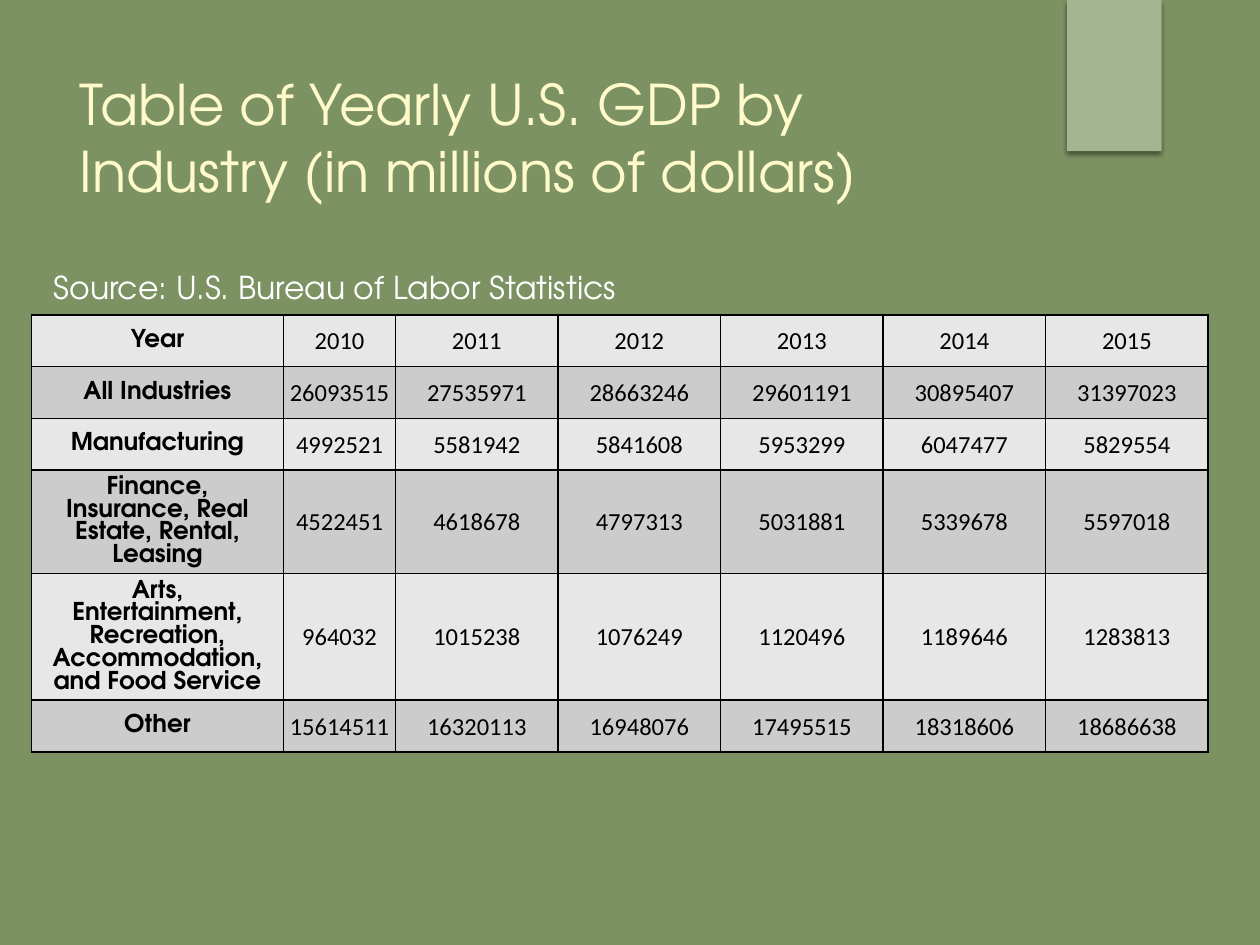
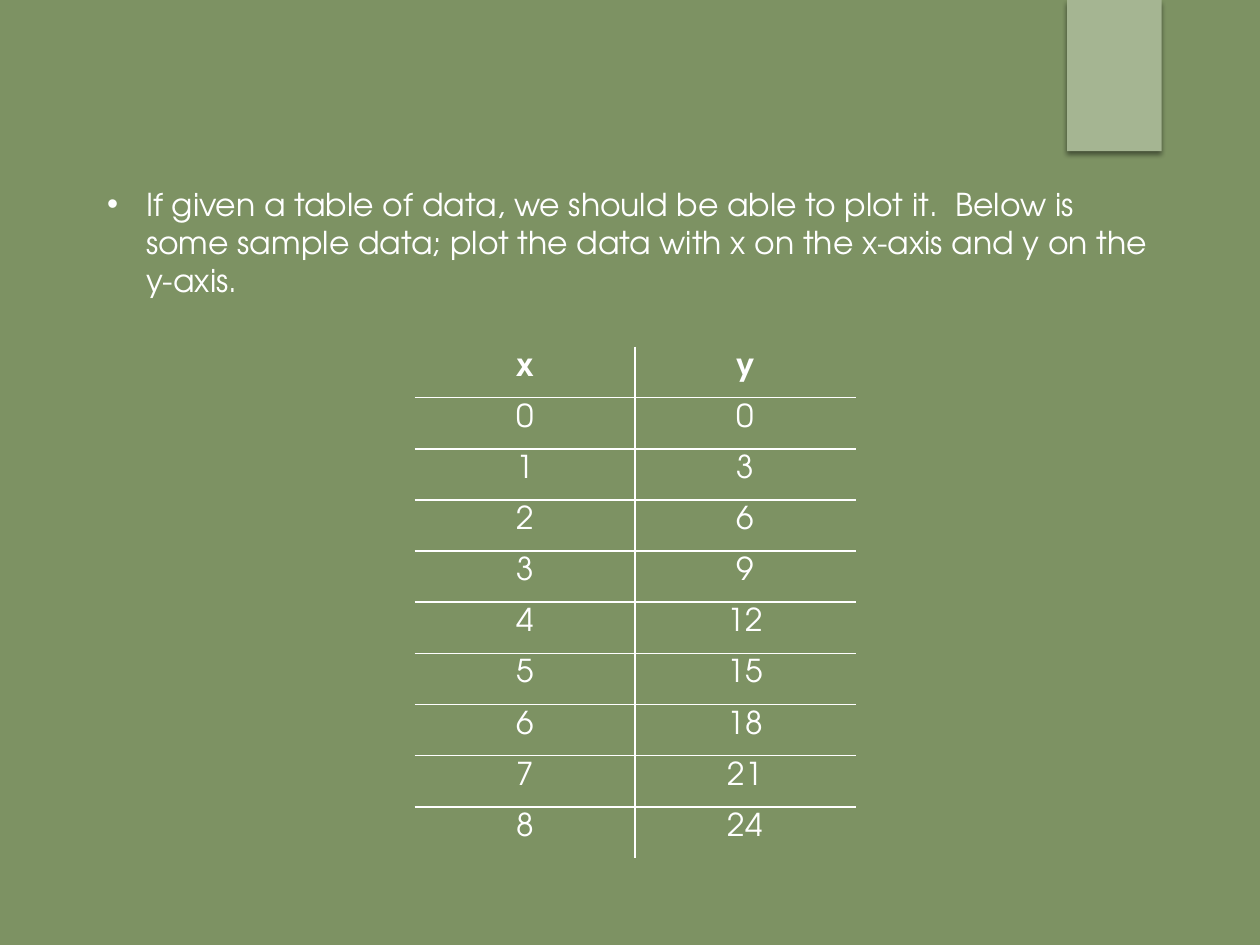
import pptx
import pptx.util
import pptx.dml.color
import pptx.enum.shapes
import pptx.enum.text
import pptx.oxml
import pptx.oxml.ns
from dataclasses import dataclass

Inches, Pt = pptx.util.Inches, pptx.util.Pt
RGB = pptx.dml.color.RGBColor.from_string
ANCHOR = pptx.enum.text.MSO_ANCHOR
ALIGN = pptx.enum.text.PP_ALIGN


@dataclass(frozen=True)
class Theme:
    background: str = "7D9263"
    tab: str = "A5B592"
    title: str = "FEFAC9"
    light: str = "FFFFFF"
    dark: str = "000000"
    bands: tuple = ("E7E7E7", "CCCCCC")
    heading_font: str = "TeX Gyre Adventor"
    figure_font: str = "Calibri"
    title_size: int = 32
    text_size: int = 18
    table_size: int = 14


theme = Theme()
title_format = {"name": theme.heading_font, "size": Pt(theme.title_size), "bold": False}
text_format = {**title_format, "size": Pt(theme.text_size)}
label_format = {**title_format, "size": Pt(theme.table_size), "bold": True}
figure_format = {**label_format, "name": theme.figure_font, "bold": False}


def write_text(frame, text, font_format, color, align=ALIGN.LEFT):
    frame.text = text
    paragraph = frame.paragraphs[0]
    for name, value in {"alignment": align, "space_before": Pt(0)}.items():
        setattr(paragraph, name, value)
    font = paragraph.runs[0].font
    for name, value in font_format.items():
        setattr(font, name, value)
    font.color.rgb = RGB(color)
    return paragraph


def set_borders(cell, colors):
    for edge, color in zip("LRTB", colors):
        paint = f'<a:solidFill><a:srgbClr val="{color}"/></a:solidFill>' if color else "<a:noFill/>"
        cell_properties = cell._tc.get_or_add_tcPr()
        cell_properties.append(pptx.oxml.parse_xml(
            f'<a:ln{edge} {pptx.oxml.ns.nsdecls("a")} w="{Pt(1)}">{paint}</a:ln{edge}>'))


deck = pptx.Presentation()
deck.slide_width, deck.slide_height = Inches(10), Inches(7.5)
master_fill = deck.slide_master.background.fill
master_fill.solid()
master_fill.fore_color.rgb = RGB(theme.background)

gdp_slide = deck.slides.add_slide(deck.slide_layouts[5])
corner_tab = gdp_slide.shapes.add_shape(
    pptx.enum.shapes.MSO_SHAPE.RECTANGLE, Inches(8.47), 0, Inches(0.75), Inches(1.2))
corner_tab.fill.solid()
corner_tab.fill.fore_color.rgb = RGB(theme.tab)
corner_tab.line.fill.background()
corner_tab.element.spPr.append(pptx.oxml.parse_xml(
    f'<a:effectLst {pptx.oxml.ns.nsdecls("a")}>'
    f'<a:outerShdw blurRad="{Pt(3)}" dist="{Pt(2)}" dir="5400000" rotWithShape="0">'
    f'<a:srgbClr val="{theme.dark}"><a:alpha val="45000"/></a:srgbClr>'
    '</a:outerShdw></a:effectLst>'))
deck.slide_master.shapes.element.insert(2, corner_tab.element)

gdp_title = gdp_slide.shapes.title
for name, value in {"left": 0.53, "top": 0.5, "width": 7.72, "height": 1.53}.items():
    setattr(gdp_title, name, Inches(value))
gdp_title.text_frame.auto_size = pptx.enum.text.MSO_AUTO_SIZE.NONE
gdp_title.text_frame.vertical_anchor = ANCHOR.TOP
write_text(gdp_title.text_frame, "Table of Yearly U.S. GDP by Industry (in millions of dollars)",
           title_format, theme.title)

gdp_rows = [
    ("Year", 2010, 2011, 2012, 2013, 2014, 2015),
    ("All Industries", 26093515, 27535971, 28663246, 29601191, 30895407, 31397023),
    ("Manufacturing", 4992521, 5581942, 5841608, 5953299, 6047477, 5829554),
    ("Finance, Insurance, Real Estate, Rental, Leasing",
     4522451, 4618678, 4797313, 5031881, 5339678, 5597018),
    ("Arts, Entertainment, Recreation, Accommodation, and Food Service",
     964032, 1015238, 1076249, 1120496, 1189646, 1283813),
    ("Other", 15614511, 16320113, 16948076, 17495515, 18318606, 18686638),
]
gdp_frame = gdp_slide.shapes.add_table(
    len(gdp_rows), len(gdp_rows[0]), Inches(0.25), Inches(2.5), Inches(9.31), Inches(3.92))
gdp_table = gdp_frame.table
for column, width in zip(gdp_table.columns, [2, 0.89] + [1.29] * 5):
    column.width = Inches(width)
figure_margins = {"margin_left": 0.01, "margin_right": 0.01, "margin_top": 0.01, "margin_bottom": 0}
for row_index, industry in enumerate(gdp_rows):
    gdp_table.rows[row_index].height = Inches(0.41)
    for column_index, entry in enumerate(industry):
        cell = gdp_table.cell(row_index, column_index)
        set_borders(cell, [theme.dark] * 4)
        cell.fill.solid()
        cell.fill.fore_color.rgb = RGB(theme.bands[row_index % 2])
        cell.vertical_anchor = ANCHOR.MIDDLE
        is_label = column_index == 0
        paragraph = write_text(cell.text_frame, str(entry),
                               label_format if is_label else figure_format, theme.dark, ALIGN.CENTER)
        if is_label:
            paragraph.line_spacing = Pt(13)
        else:
            for name, value in figure_margins.items():
                setattr(cell, name, Inches(value))
gdp_frame.height = Inches(3.92)

source_note = gdp_slide.shapes.add_textbox(Inches(0.33), Inches(2.08), Inches(4.75), Inches(0.4))
source_note.text_frame.word_wrap = True
write_text(source_note.text_frame, "Source: U.S. Bureau of Labor Statistics", text_format, theme.light)

plot_slide = deck.slides.add_slide(deck.slide_layouts[1])
unused_title = plot_slide.shapes.title.element
unused_title.getparent().remove(unused_title)

sample_rows = [("x", "y")] + [(x, 3 * x) for x in range(9)]
sample_table = plot_slide.shapes.add_table(
    len(sample_rows), 2, Inches(3.29), Inches(2.75), Inches(3.5), Inches(4.06)).table
sample_table.horz_banding = False
for row_index, pair in enumerate(sample_rows):
    for column_index, entry in enumerate(pair):
        cell = sample_table.cell(row_index, column_index)
        inner_edges = (column_index > 0, column_index < 1,
                       row_index > 0, row_index < len(sample_rows) - 1)
        set_borders(cell, [theme.light if inner else None for inner in inner_edges])
        cell.fill.background()
        write_text(cell.text_frame, str(entry), {**text_format, "bold": row_index == 0},
                   theme.light, ALIGN.CENTER)

plot_task = plot_slide.placeholders[1]
for name, value in {"left": 0.75, "top": 0.5, "width": 8.58, "height": 1.92}.items():
    setattr(plot_task, name, Inches(value))
plot_task.text_frame.auto_size = pptx.enum.text.MSO_AUTO_SIZE.NONE
plot_task.text_frame.vertical_anchor = ANCHOR.BOTTOM
task_paragraph = write_text(
    plot_task.text_frame,
    "If given a table of data, we should be able to plot it.  Below is some sample data; "
    "plot the data with x on the x-axis and y on the y-axis.", text_format, theme.light)
task_properties = task_paragraph._p.get_or_add_pPr()
for name, value in {"marL": 0.31, "indent": -0.31}.items():
    task_properties.set(name, str(Inches(value)))
task_properties.append(pptx.oxml.parse_xml(f'<a:buChar {pptx.oxml.ns.nsdecls("a")} char="•"/>'))

deck.save("out.pptx")
